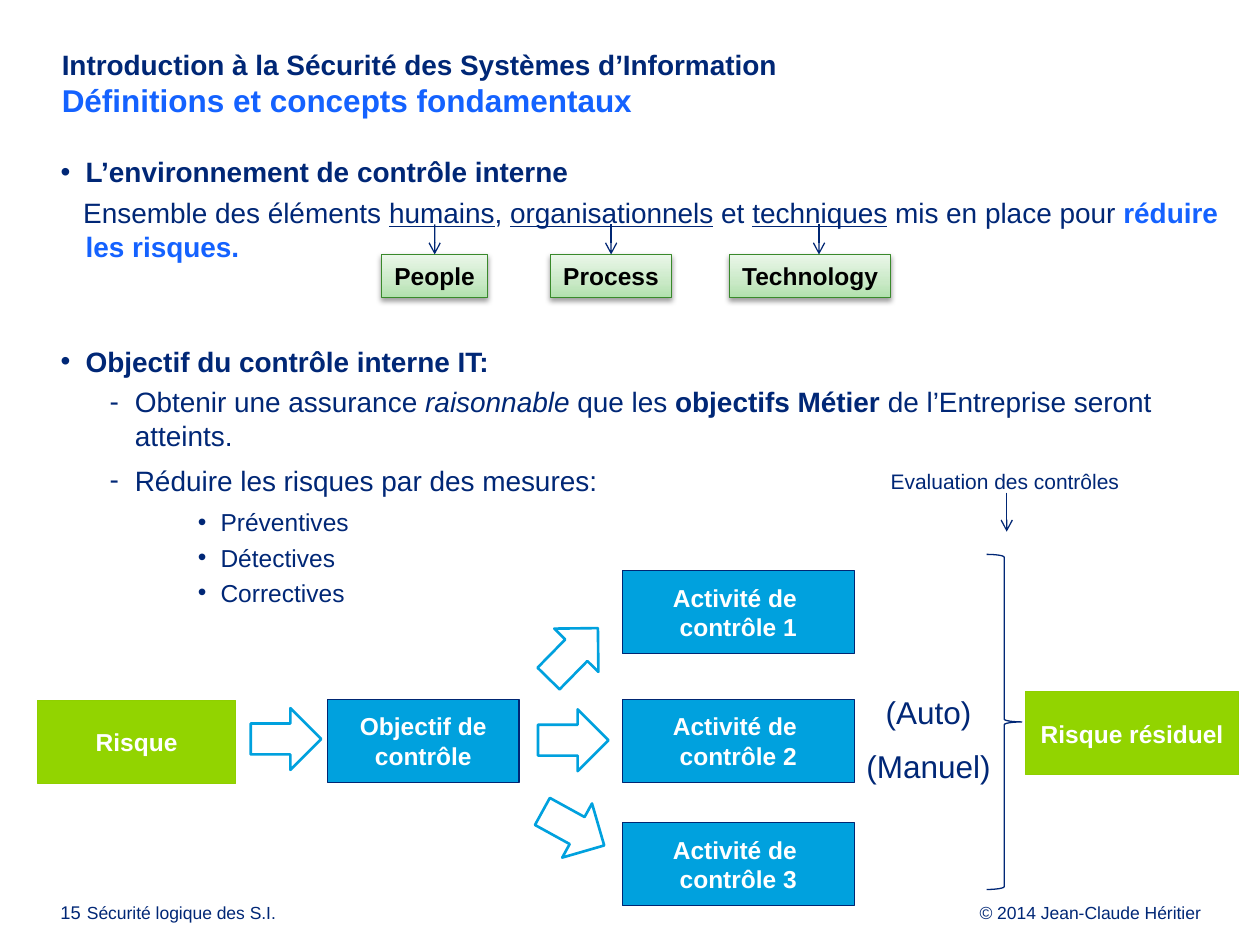
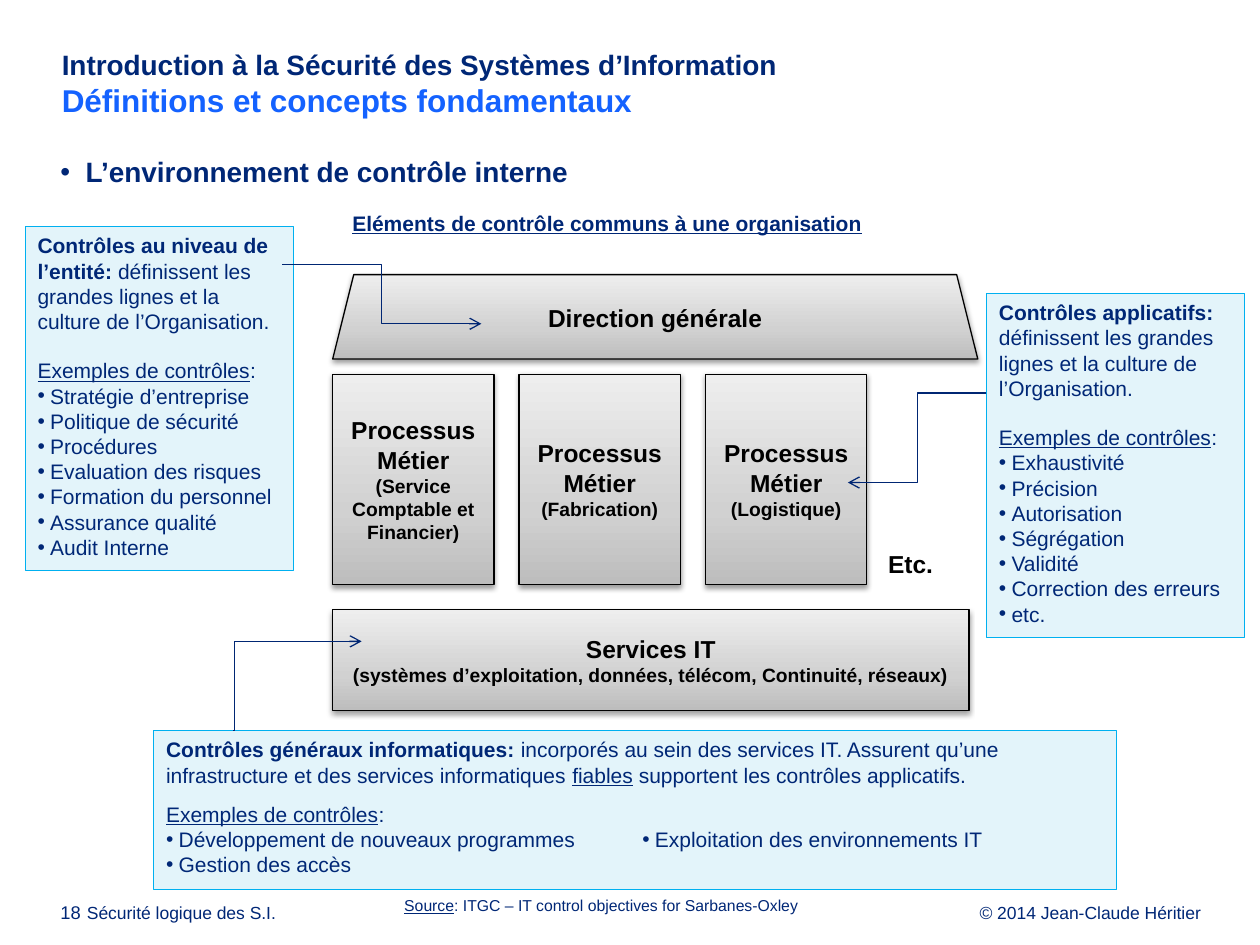
import dataclasses

import lxml.etree
import pptx
import pptx.dml.color
import pptx.enum.shapes
import pptx.enum.text
import pptx.oxml.ns
import pptx.util

Inches = pptx.util.Inches
Pt = pptx.util.Pt
SHAPE = pptx.enum.shapes.MSO_SHAPE
LINK = pptx.enum.shapes.MSO_CONNECTOR
ALIGN = pptx.enum.text.PP_ALIGN
ANCHOR = pptx.enum.text.MSO_ANCHOR
qn = pptx.oxml.ns.qn


@dataclasses.dataclass(frozen=True)
class Theme:
    font: str = "Arial"
    navy: str = "002776"
    edge: str = "002673"
    accent: str = "1462FF"
    black: str = "000000"
    white: str = "FFFFFF"
    lime: str = "92D400"
    lime_edge: str = "8FCF00"
    cyan: str = "00A1DE"
    pale: str = "E3F4FA"
    pale_edge: str = "00B0F0"
    green_edge: str = "39892B"
    greens: tuple = ("B1E1AD", "C9E9C6", "EAF7E9")
    greys: tuple = ("BDBDBD", "D1D1D1", "EEEEEE")
    subtitle: float = 18
    heading: float = 16
    label: float = 14
    note: float = 12
    detail: float = 11
    number: float = 10.5
    footer: float = 10
    source: float = 9


T = Theme()


@dataclasses.dataclass
class Para:
    runs: object
    size: float = T.note
    color: str = T.navy
    align: object = ALIGN.LEFT
    before: float = 0
    after: float = 0
    spacing: object = 1.0
    bullet: str = ""
    left: float = 0
    first: float = 0


def rgb(value):
    return pptx.dml.color.RGBColor.from_string(value)


def child(parent, tag, **attrs):
    return lxml.etree.SubElement(parent, qn(tag), {k: str(v) for k, v in attrs.items()})


def write(tf, paras, insets=(0.1, 0.05, 0.1, 0.05), anchor=ANCHOR.TOP, wrap=True):
    tf.word_wrap = wrap
    tf.auto_size = pptx.enum.text.MSO_AUTO_SIZE.NONE
    tf.vertical_anchor = anchor
    tf.margin_left, tf.margin_top, tf.margin_right, tf.margin_bottom = map(Inches, insets)
    for i, para in enumerate(paras):
        p = tf.add_paragraph() if i else tf.paragraphs[0]
        p.alignment, p.line_spacing = para.align, para.spacing
        p.space_before, p.space_after = Pt(para.before), Pt(para.after)
        ppr = p._p.get_or_add_pPr()
        ppr.set("marL", str(Inches(para.left)))
        ppr.set("indent", str(Inches(para.first)))
        if para.bullet:
            child(ppr, "a:buFont", typeface=T.font)
            child(ppr, "a:buChar", char=para.bullet)
        else:
            child(ppr, "a:buNone")
        runs = [(para.runs, "")] if isinstance(para.runs, str) else para.runs
        for text, flags in runs:
            r = p.add_run()
            r.text = text
            r.font.name, r.font.size = T.font, Pt(para.size)
            r.font.color.rgb = rgb(T.accent if "a" in flags else para.color)
            r.font.bold, r.font.italic, r.font.underline = (f in flags for f in "biu")


def at(box, x, y, w, h):
    return box[0] + x, box[1] + y, w, h


def add_text(slide, box, paras, **options):
    sp = slide.shapes.add_textbox(*map(Inches, box))
    write(sp.text_frame, paras, **options)
    return sp


def add_box(slide, box, fill, line, kind=SHAPE.RECTANGLE, width=0.75):
    sp = slide.shapes.add_shape(kind, *map(Inches, box))
    sp.shadow.inherit = False
    if fill:
        sp.fill.solid()
        sp.fill.fore_color.rgb = rgb(fill)
    else:
        sp.fill.background()
    sp.line.color.rgb = rgb(line)
    sp.line.width = Pt(width)
    return sp


def add_shaded_box(slide, box, colors, line, paras, kind=SHAPE.RECTANGLE, **options):
    sp = add_box(slide, box, None, line, kind)
    sp.fill.gradient()
    sp.fill.gradient_angle = 90
    stops = sp._element.spPr.find(".//" + qn("a:gsLst"))
    for stop in list(stops):
        stops.remove(stop)
    for pos, color in zip((0, 35000, 100000), colors):
        child(child(stops, "a:gs", pos=pos), "a:srgbClr", val=color)
    shadow = child(sp._element.spPr.find(qn("a:effectLst")), "a:outerShdw",
                   blurRad=Pt(3.1), dist=Pt(1.6), dir=5400000, rotWithShape=0)
    child(child(shadow, "a:srgbClr", val=T.black), "a:alpha", val=38000)
    write(sp.text_frame, paras, anchor=ANCHOR.MIDDLE, **options)
    return sp


def add_arrow(slide, start, end, kind=LINK.STRAIGHT, bend=None):
    cx = slide.shapes.add_connector(kind, *map(Inches, start + end))
    cx.line.color.rgb = rgb(T.edge)
    cx.line.width = Pt(0.75)
    child(cx.line._get_or_add_ln(), "a:tailEnd", type="arrow")
    spPr = cx._element.spPr
    child(spPr, "a:effectLst")
    if bend is not None:
        guides = spPr.find(".//" + qn("a:avLst"))
        child(guides, "a:gd", name="adj1", fmla=f"val {round(bend * 100000)}")
    return cx


def centred(text, size=T.label, color=T.black, flags="b"):
    return Para([(text, flags)], size, color, ALIGN.CENTER)


def heading(text, before=0):
    return Para([(text, "b")], T.heading, before=before, after=4, bullet="•", left=0.2, first=-0.2)


def base_slide(prs, number):
    slide = prs.slides.add_slide(prs.slide_layouts[5])
    title = slide.shapes.title
    title.left, title.top, title.width, title.height = map(Inches, (0.45, 0.38, 9.21, 0.69))
    write(title.text_frame, [
        Para([("Introduction à la Sécurité des Systèmes d’Information", "b")], T.heading),
        Para([("Définitions et concepts fondamentaux", "ba")], T.subtitle),
    ], insets=(0.04, 0, 0, 0))
    for left, width, text, size, align in (
            (7, 2.53, "© 2014 Jean-Claude Héritier", T.footer, ALIGN.RIGHT),
            (0.69, 2.53, "Sécurité logique des S.I.", T.footer, ALIGN.LEFT),
            (0.48, 0.26, str(number), T.number, ALIGN.LEFT)):
        add_text(slide, (left, 7.18, width, 0.16),
                 [Para(text, size, align=align, spacing=Pt(10.8))], insets=(0, 0, 0, 0))
    return slide


def definitions(slide, box):
    def aim(runs):
        return Para(runs, T.heading, after=6.2, bullet="-", left=0.59, first=-0.2)

    measures = [Para(text, T.label, after=3.2, bullet="•", left=1.27, first=-0.18)
                for text in ("Préventives", "Détectives", "Correctives")]
    add_text(slide, box, [
        heading("L’environnement de contrôle interne"),
        Para([("Ensemble des éléments ", ""), ("humains", "u"), (", ", ""),
              ("organisationnels", "u"), (" et ", ""), ("techniques", "u"),
              (" mis en place pour ", ""), ("réduire les risques.", "ba")],
             T.heading, after=4, left=0.2, first=-0.02),
        heading("Objectif du contrôle interne IT:", before=42.7),
        aim([("Obtenir une assurance ", ""), ("raisonnable", "i"), (" que les ", ""),
             ("objectifs Métier ", "b"), ("de l’Entreprise seront atteints.", "")]),
        aim("Réduire les risques par des mesures:"),
    ] + measures, insets=(0.04, 0, 0, 0))


def pillars(slide, box):
    for text, dx, width, arrow_dx in (("People", 0, 0.84, 0.42),
                                      ("Process", 1.34, 0.96, 1.82),
                                      ("Technology", 2.76, 1.28, 3.47)):
        sp = add_shaded_box(slide, at(box, dx, 0.24, width, 0.34), T.greens, T.green_edge,
                            [centred(text)], wrap=False)
        x = box[0] + arrow_dx
        cx = add_arrow(slide, (x, box[1]), (x, box[1] + 0.24))
        if abs(arrow_dx - dx - width / 2) < 0.01:
            cx.end_connect(sp, 0)


def risk_flow(slide, box):
    def step(dx, dy, width, lines, fill, line):
        sp = add_box(slide, at(box, dx, dy, width, 0.66), fill, line)
        write(sp.text_frame, [centred(text, color=T.white) for text in lines],
              insets=(0, 0, 0, 0), anchor=ANCHOR.MIDDLE)

    step(0, 1.16, 1.57, ["Risque"], T.lime, T.lime_edge)
    step(2.3, 1.15, 1.52, ["Objectif de", "contrôle"], T.cyan, T.edge)
    for i, dy in enumerate((0.13, 1.15, 2.13), 1):
        step(4.64, dy, 1.84, ["Activité de ", f"contrôle {i}"], T.cyan, T.edge)
    step(7.84, 1.09, 1.69, ["Risque résiduel"], T.lime, T.lime_edge)
    for dx, dy, angle in ((1.69, 1.22, 0), (3.97, 0.54, 314.4), (3.97, 1.23, 0), (3.97, 1.93, 28.8)):
        sp = add_box(slide, at(box, dx, dy, 0.56, 0.49), None, T.cyan, SHAPE.RIGHT_ARROW, 1.5)
        sp.rotation = angle
    modes = [centred(text, T.subtitle, T.navy, "") for text in ("(Auto)", "(Manuel)")]
    modes[1].before = 9.5
    add_text(slide, at(box, 6.47, 1.05, 1.2, 0.86), modes, wrap=False)
    brace = add_box(slide, at(box, 7.53, 0, 0.28, 2.66), None, T.navy, SHAPE.RIGHT_BRACE)
    brace.adjustments[0] = 0.08
    add_text(slide, at(box, 6.67, -0.73, 2.03, 0.3), [Para("Evaluation des contrôles")], wrap=False)
    x, y = box[0] + 7.69, box[1] - 0.49
    add_arrow(slide, (x, y), (x, y + 0.31))


def organisation(slide, box):
    def block(dx, dy, w, h, name, detail="", kind=SHAPE.RECTANGLE):
        paras = [centred(name)] + ([centred(detail, T.detail)] if detail else [])
        add_shaded_box(slide, at(box, dx, dy, w, h), T.greys, T.black, paras, kind)

    block(0, 2.66, 5.05, 0.8, "Services IT",
          "(systèmes d’exploitation, données, télécom, Continuité, réseaux)")
    for i, detail in enumerate(("Service Comptable et Financier", "Fabrication", "Logistique")):
        block(i * 1.48, 0.79, 1.28, 1.67, "Processus Métier", f"({detail})")
    block(0, 0, 5.12, 0.67, "Direction générale", kind=SHAPE.TRAPEZOID)
    etc = Para([("Etc.", "b")], T.label, T.black)
    add_text(slide, at(box, 4.31, 2.13, 0.56, 0.34), [etc], wrap=False)
    add_text(slide, at(box, -0.32, -0.56, 5, 0.3),
             [centred("Eléments de contrôle communs à une organisation", T.note, T.navy, "bu")])


def example(text):
    return Para(text, bullet="•", left=0.1, first=-0.1)


def callout(slide, box, intro, examples, gap=13.8):
    sp = add_box(slide, box, T.pale, T.pale_edge)
    title = Para([("Exemples de contrôles", "u"), (":", "")], before=gap)
    write(sp.text_frame, [Para(intro), title] + [example(text) for text in examples])


def control_levels(slide):
    outline = "définissent les grandes lignes et la culture de l’Organisation."
    callout(slide, (0.2, 1.8, 2.13, 2.73),
            [("Contrôles au niveau de l’entité: ", "b"), (outline, "")],
            ["Stratégie d’entreprise", "Politique de sécurité", "Procédures",
             "Evaluation des risques", "Formation du personnel", "Assurance qualité",
             "Audit Interne"])
    callout(slide, (1.22, 5.8, 7.64, 1.26),
            [("Contrôles généraux informatiques: ", "b"),
             ("incorporés au sein des services IT. Assurent qu’une infrastructure et des "
              "services informatiques ", ""),
             ("fiables", "u"), (" supportent les contrôles applicatifs.", "")],
            ["Développement de nouveaux programmes", "Gestion des accès"], gap=8)
    add_text(slide, (5, 6.51, 3.07, 0.3), [example("Exploitation des environnements IT")])
    callout(slide, (7.83, 2.33, 2.05, 2.73),
            [("Contrôles applicatifs: ", "b"), (outline, "")],
            ["Exhaustivité", "Précision", "Autorisation", "Ségrégation", "Validité",
             "Correction des erreurs", "etc."])
    for start, end, bend in (((2.24, 2.1), (3.82, 2.57), 0.5),
                             ((1.85, 5.8), (2.87, 5.09), 0.01),
                             ((7.83, 3.12), (6.73, 3.83), 0.5)):
        add_arrow(slide, start, end, LINK.ELBOW, bend)


def internal_control_slide(prs):
    slide = base_slide(prs, 15)
    definitions(slide, (0.44, 1.23, 9.28, 5.75))
    risk_flow(slide, (0.3, 4.4))
    pillars(slide, (3.03, 1.78))


def control_environment_slide(prs):
    slide = base_slide(prs, 18)
    add_text(slide, (0.44, 1.23, 9.2, 0.39), [heading("L’environnement de contrôle interne")],
             insets=(0.04, 0, 0, 0))
    organisation(slide, (2.64, 2.18))
    control_levels(slide)
    add_text(slide, (3.11, 7.06, 3.35, 0.25),
             [Para([("Source", "u"), (": ITGC – IT control objectives for Sarbanes-Oxley", "")],
                   T.source)], wrap=False)


def main():
    prs = pptx.Presentation()
    prs.slide_width, prs.slide_height = Inches(10), Inches(7.5)
    internal_control_slide(prs)
    control_environment_slide(prs)
    prs.save("out.pptx")


if __name__ == "__main__":
    main()
